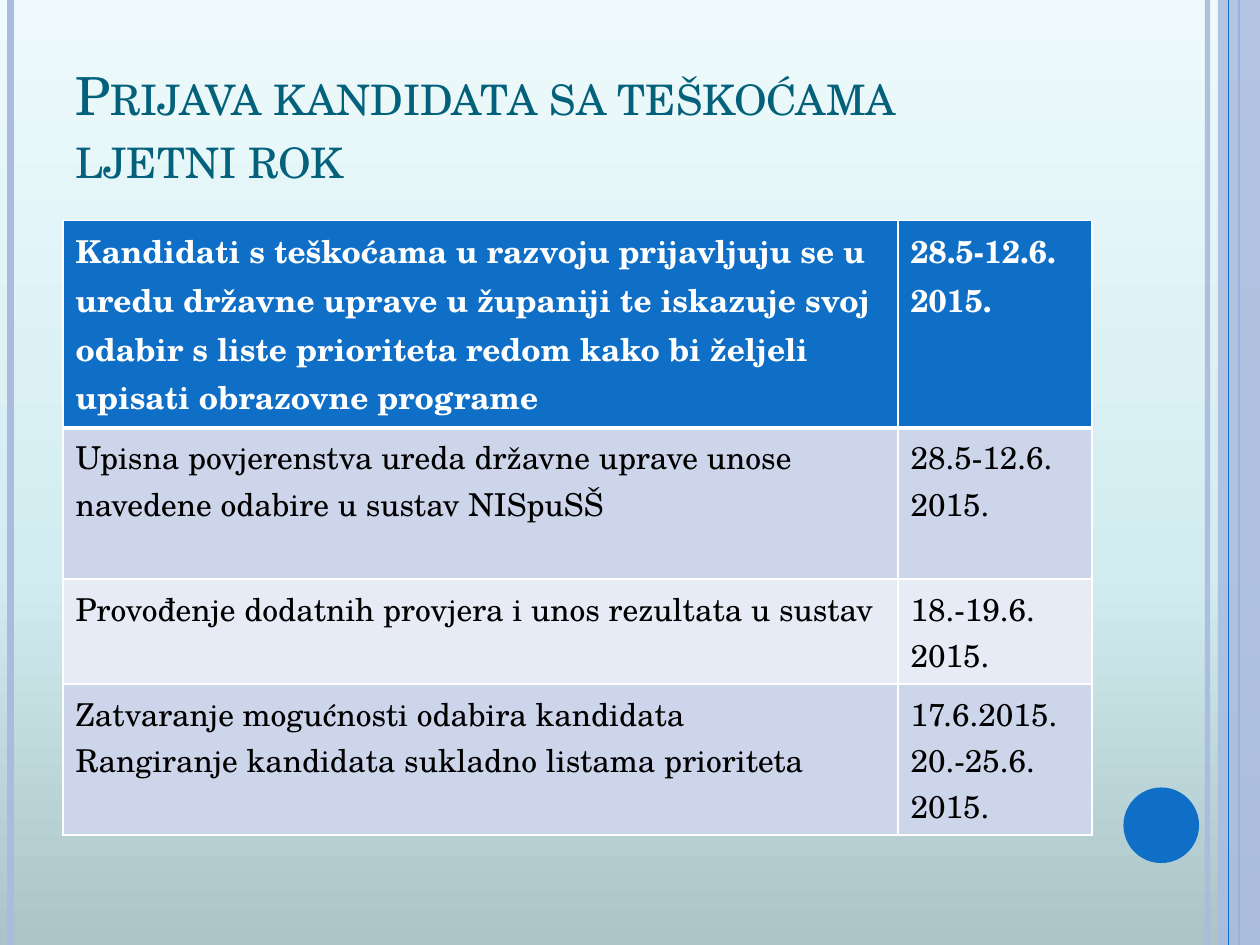
from copy import deepcopy

from lxml import etree
from pptx import Presentation
from pptx.dml.color import RGBColor
from pptx.enum.shapes import MSO_CONNECTOR, MSO_SHAPE
from pptx.enum.text import MSO_ANCHOR
from pptx.oxml.ns import qn
from pptx.util import Pt

STRAIGHT = MSO_CONNECTOR.STRAIGHT
RECTANGLE, OVAL = MSO_SHAPE.RECTANGLE, MSO_SHAPE.OVAL
BOTTOM = MSO_ANCHOR.BOTTOM

WIDTH, HEIGHT = 720, 540
BLUE, LAVENDER, TEAL = "0F6FC6", "ABBBDF", "04617B"
WHITE, BLACK = "FFFFFF", "000000"
BANDS = ("CCD5EA", "E7EBF5")


def color(hex_code):
    return RGBColor.from_string(hex_code)


class SlideBuilder:
    font = "TeX Gyre Schola"

    def __init__(self, slide):
        self.slide = slide

    def background(self, stops, angle):
        fill = self.slide.background.fill
        fill.gradient()
        fill.gradient_angle = angle
        stop_list = next(self.slide.element.iter(qn("a:gsLst")))
        while len(stop_list) < len(stops):
            stop_list.append(deepcopy(stop_list[0]))
        for stop, (position, hex_code) in zip(fill.gradient_stops, stops):
            stop.position = position
            stop.color.rgb = color(hex_code)

    def set_alpha(self, shape, percent):
        rgb = next(shape.element.spPr.iter(qn("a:srgbClr")))
        etree.SubElement(rgb, qn("a:alpha"), val=str(percent * 1000))

    def vertical_line(self, x, hex_code, width, alpha=100):
        line = self.slide.shapes.add_connector(
            STRAIGHT, Pt(x), Pt(0), Pt(x), Pt(HEIGHT))
        line.line.color.rgb = color(hex_code)
        line.line.width = Pt(width)
        if alpha < 100:
            self.set_alpha(line, alpha)
        etree.SubElement(line.element.spPr, qn("a:effectLst"))

    def shape(self, kind, box, hex_code, alpha=100):
        shape = self.slide.shapes.add_shape(kind, *map(Pt, box))
        shape.shadow.inherit = False
        shape.fill.solid()
        shape.fill.fore_color.rgb = color(hex_code)
        shape.line.fill.background()
        if alpha < 100:
            self.set_alpha(shape, alpha)

    def style(self, paragraph, size, hex_code, bold=False):
        font = paragraph.font
        font.name, font.size, font.bold = self.font, Pt(size), bold
        font.color.rgb = color(hex_code)

    def title(self, text, box, size, hex_code):
        frame = self.slide.shapes.add_textbox(*map(Pt, box)).text_frame
        frame.word_wrap = True
        frame.vertical_anchor = BOTTOM
        heading = frame.paragraphs[0]
        heading.text = text
        self.style(heading, size, hex_code)
        for run in heading.runs:
            run.font.size = Pt(size)
            run.font._element.set("cap", "small")

    def borders(self, cell, **widths):
        properties = cell._tc.get_or_add_tcPr()
        for index, side in enumerate("LRTB"):
            line = etree.Element(qn(f"a:ln{side}"),
                                 w=str(Pt(widths.get(side, 1))))
            fill = etree.SubElement(line, qn("a:solidFill"))
            etree.SubElement(fill, qn("a:srgbClr"), val=WHITE)
            properties.insert(index, line)

    def table(self, rows, left, top, column_widths, row_heights, size):
        table = self.slide.shapes.add_table(
            len(rows), len(column_widths), Pt(left), Pt(top),
            Pt(sum(column_widths)), Pt(sum(row_heights))).table
        table.horz_banding = False
        for column, width in zip(table.columns, column_widths):
            column.width = Pt(width)
        for r, (texts, height) in enumerate(zip(rows, row_heights)):
            table.rows[r].height = Pt(height)
            header = r == 0
            for c, text in enumerate(texts):
                cell = table.cell(r, c)
                cell.text = text
                cell.fill.solid()
                cell.fill.fore_color.rgb = color(
                    BLUE if header else BANDS[(r - 1) % 2])
                for paragraph in cell.text_frame.paragraphs:
                    self.style(paragraph, size,
                               WHITE if header else BLACK, header)
                self.borders(cell, B=3 if header else 1, T=3 if r == 1 else 1)


def main():
    deck = Presentation()
    deck.slide_width, deck.slide_height = Pt(WIDTH), Pt(HEIGHT)
    builder = SlideBuilder(deck.slides.add_slide(deck.slide_layouts[6]))

    # Background and side stripes
    builder.background([(0, "AAC4C7"), (0.4, "D2EDF1"), (1, "EEFAFC")], 90)
    builder.vertical_line(690, LAVENDER, 3, alpha=93)
    builder.vertical_line(6, LAVENDER, 4.5)
    builder.vertical_line(708, BLUE, 1.5)
    builder.shape(RECTANGLE, (696, 0, 24, HEIGHT), LAVENDER, alpha=87)
    builder.vertical_line(702, BLUE, 0.75)
    builder.shape(OVAL, (642, 450, 43.2, 43.2), BLUE)

    # Title
    builder.title("Prijava kandidata sa teškoćama\vljetni rok",
                  (36, 21.6, 588, 90), 30, TEAL)

    # Schedule of tasks and dates
    schedule = [
        ("Kandidati s teškoćama u razvoju prijavljuju se u uredu državne "
         "uprave u županiji te iskazuje svoj odabir s liste prioriteta redom "
         "kako bi željeli upisati obrazovne programe", "28.5-12.6. 2015."),
        ("Upisna povjerenstva ureda državne uprave unose navedene odabire "
         "u sustav NISpuSŠ", "28.5-12.6. 2015."),
        ("Provođenje dodatnih provjera i unos rezultata u sustav",
         "18.-19.6. 2015."),
        ("Zatvaranje mogućnosti odabira kandidata\n"
         "Rangiranje kandidata sukladno listama prioriteta",
         "17.6.2015.\n20.-25.6. 2015."),
    ]
    builder.table(schedule, 36, 126, (477.2, 110.8),
                  (118.5, 86.4, 60, 86.4), 18)

    deck.save("out.pptx")


if __name__ == "__main__":
    main()
